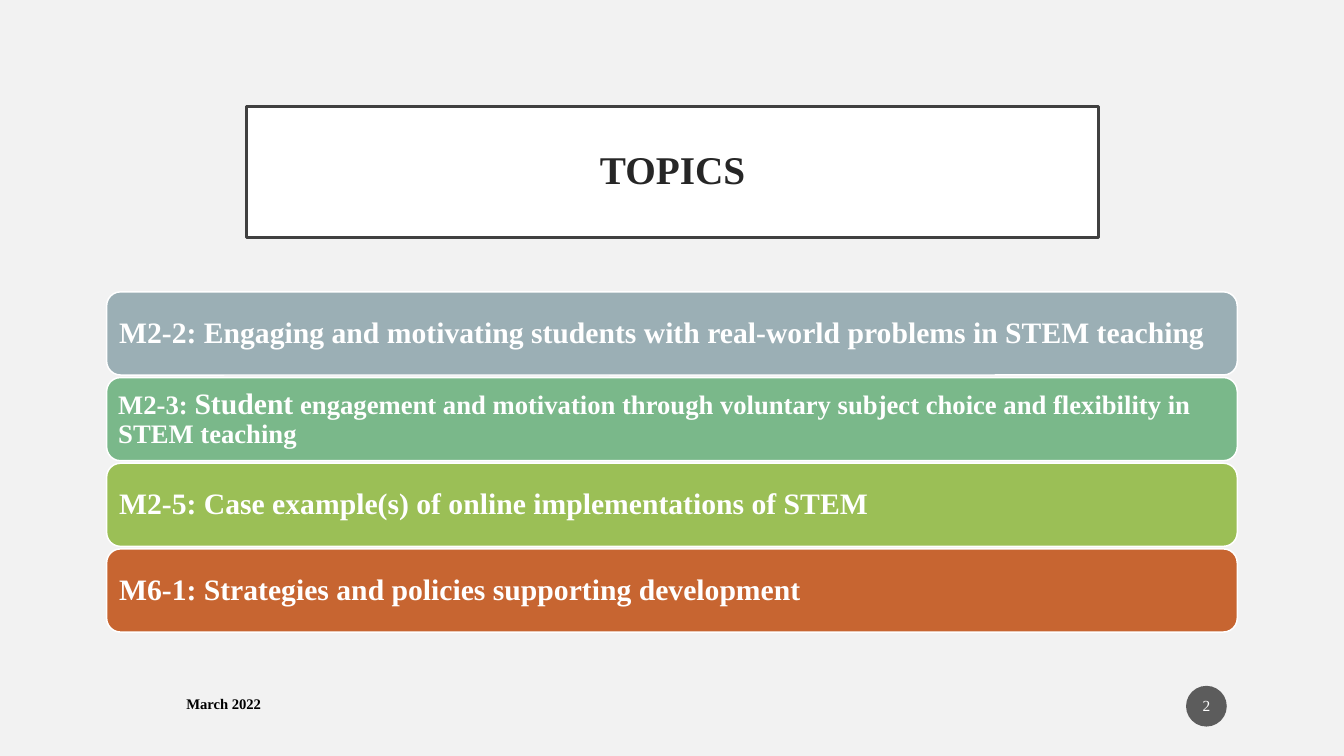
from lxml import etree
from pptx import Presentation
from pptx.dml.color import RGBColor
from pptx.enum.shapes import MSO_SHAPE
from pptx.enum.text import MSO_ANCHOR, PP_ALIGN
from pptx.oxml.ns import qn
from pptx.util import Cm, Pt

RECTANGLE = MSO_SHAPE.RECTANGLE
ROUNDED = MSO_SHAPE.ROUNDED_RECTANGLE
OVAL = MSO_SHAPE.OVAL
MIDDLE = MSO_ANCHOR.MIDDLE
LEFT, CENTER = PP_ALIGN.LEFT, PP_ALIGN.CENTER

FONT = "Times New Roman"
WHITE = "FFFFFF"
BAR_TOP, BAR_PITCH, BAR_HEIGHT = 6.95, 2.04, 1.98

# Each topic: bar colour, text margin in cm, runs of text with their sizes
TOPICS = [
    ("9BAFB5", 0.2, [("M2-2: Engaging and motivating students with real-world "
                      "problems in STEM teaching", 20)]),
    ("7AB88A", 0.18, [("M2-3: ", 18), ("Student", 20),
                      (" engagement and motivation through voluntary subject "
                       "choice and flexibility in STEM teaching", 18)]),
    ("9BBF56", 0.2, [("M2-5: Case example(s) of online implementations of STEM", 20)]),
    ("C76531", 0.2, [("M6-1: Strategies and policies supporting development", 20)]),
]


def rgb(hex_colour):
    return RGBColor.from_string(hex_colour)


def add_panel(slide, kind, box, fill, line=None, line_width=1):
    """Add a filled preset shape; box is left, top, width, height in cm."""
    panel = slide.shapes.add_shape(kind, *map(Cm, box))
    panel.shadow.inherit = False
    panel.fill.solid()
    panel.fill.fore_color.rgb = rgb(fill)
    if line:
        panel.line.color.rgb = rgb(line)
        panel.line.width = Pt(line_width)
    else:
        panel.line.fill.background()
    return panel


def set_opacity(panel, percent):
    colour = panel.fill._xPr.find(qn("a:solidFill"))[0]
    etree.SubElement(colour, qn("a:alpha")).set("val", str(percent * 1000))


def write_text(shape, runs, colour, margins, align=LEFT, bold=True, spacing=0.9):
    """Fill a shape with one paragraph; margins are horizontal, vertical in cm."""
    frame = shape.text_frame
    frame.word_wrap = True
    frame.vertical_anchor = MIDDLE
    frame.margin_left = frame.margin_right = Cm(margins[0])
    frame.margin_top = frame.margin_bottom = Cm(margins[1])
    paragraph = frame.paragraphs[0]
    paragraph.alignment = align
    paragraph.line_spacing = spacing
    paragraph.font.name = FONT
    paragraph.font.bold = bold
    paragraph.font.color.rgb = rgb(colour)
    for text, size in runs:
        run = paragraph.add_run()
        run.text = text
        run.font.size = Pt(size)


def add_title(slide):
    title = add_panel(slide, RECTANGLE, (5.87, 2.54, 20.29, 3.12), WHITE, "404040", 2.5)
    write_text(title, [("TOPICS", 26.5)], "262626", (0.5, 0.5), CENTER)


def add_topics(slide):
    for row, (colour, margin, runs) in enumerate(TOPICS):
        box = (2.54, BAR_TOP + row * BAR_PITCH, 26.92, BAR_HEIGHT)
        bar = add_panel(slide, ROUNDED, box, colour, WHITE)
        write_text(bar, runs, WHITE, (margin, margin))


def add_footer(slide):
    date = slide.shapes.add_textbox(Cm(4.19), Cm(16.33), Cm(15.49), Cm(0.84))
    write_text(date, [("March 2022", 9.9)], "000000", (0.25, 0.13), spacing=1.0)
    badge = add_panel(slide, OVAL, (28.24, 16.33, 0.97, 0.97), "1D1D1D")
    set_opacity(badge, 70)
    write_text(badge, [("2", 10.4)], WHITE, (0.05, 0.13), CENTER, bold=False)


def main():
    presentation = Presentation()
    presentation.slide_width = Cm(32)
    presentation.slide_height = Cm(18)
    slide = presentation.slides.add_slide(presentation.slide_layouts[6])
    slide.background.fill.solid()
    slide.background.fill.fore_color.rgb = rgb("F2F2F2")
    add_title(slide)
    add_topics(slide)
    add_footer(slide)
    presentation.save("out.pptx")


if __name__ == "__main__":
    main()
